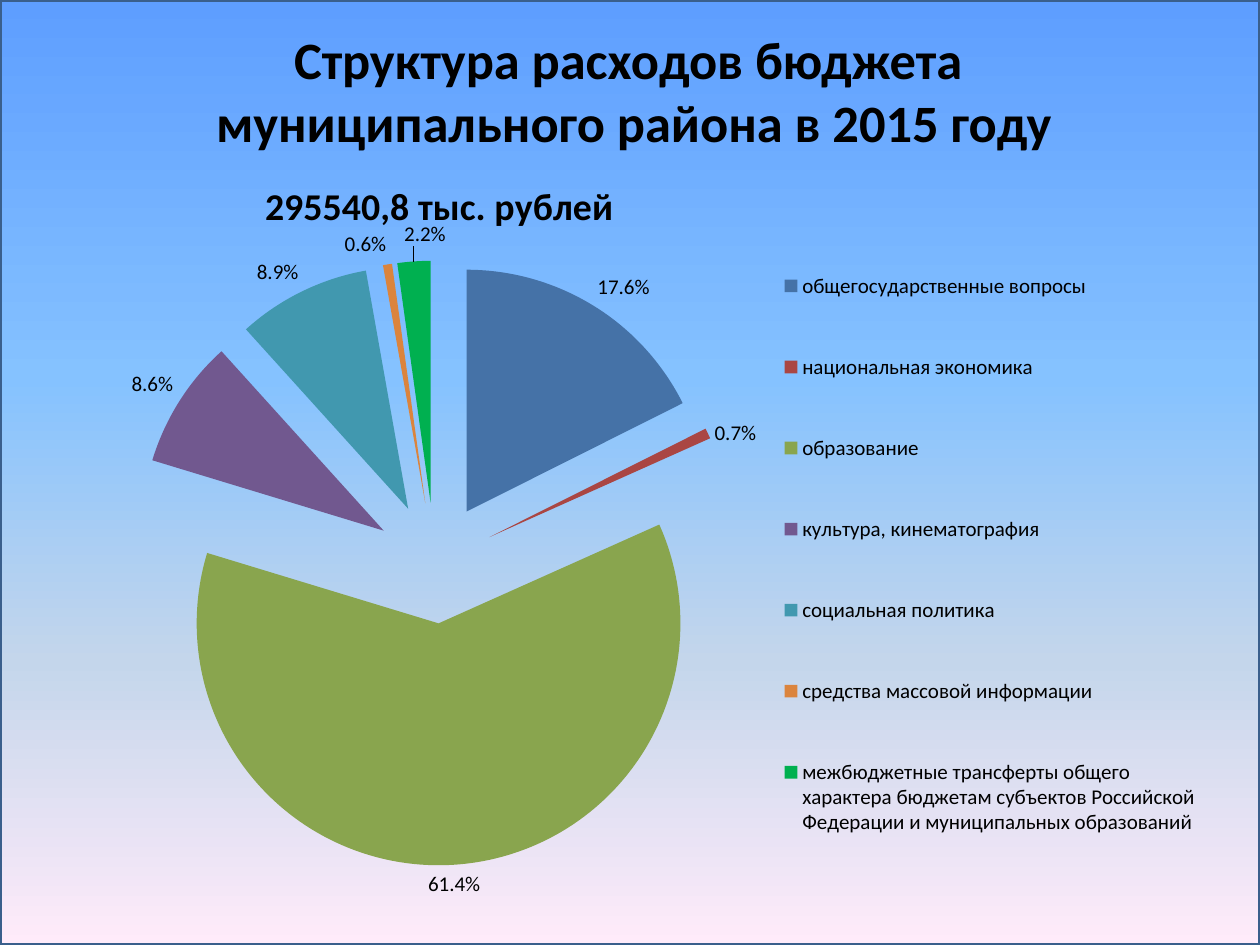
from lxml import etree
from pptx import Presentation
from pptx.chart.data import CategoryChartData
from pptx.dml.color import RGBColor
from pptx.enum.chart import XL_CHART_TYPE, XL_LABEL_POSITION, XL_LEGEND_POSITION
from pptx.enum.shapes import MSO_SHAPE
from pptx.enum.text import MSO_ANCHOR, PP_ALIGN
from pptx.oxml import parse_xml
from pptx.oxml.ns import qn
from pptx.util import Inches, Pt

PIE = XL_CHART_TYPE.PIE
OUTSIDE_END = XL_LABEL_POSITION.OUTSIDE_END
LEGEND_RIGHT = XL_LEGEND_POSITION.RIGHT
RECTANGLE = MSO_SHAPE.RECTANGLE
MIDDLE = MSO_ANCHOR.MIDDLE
CENTER = PP_ALIGN.CENTER

FONT = "Calibri"
COLORS = {
    "text": "000000",
    "border": "3A5F8C",
    "general": "4572A7",
    "economy": "AA4643",
    "education": "89A54E",
    "culture": "71588F",
    "social": "4198AF",
    "media": "DB843D",
    "transfers": "00B050",
}
BACKGROUND_STOPS = [(0, "5E9EFF"), (40, "85C2FF"), (70, "C4D6EB"), (100, "FFEBFA")]
EXPENSES = [
    ("общегосударственные вопросы", 0.176, "general"),
    ("национальная экономика", 0.007, "economy"),
    ("образование", 0.614, "education"),
    ("культура, кинематография", 0.086, "culture"),
    ("социальная политика", 0.089, "social"),
    ("средства массовой информации", 0.006, "media"),
    ("межбюджетные трансферты общего характера бюджетам субъектов "
     "Российской Федерации и муниципальных образований", 0.022, "transfers"),
]
TOTAL = "295540,8 тыс. рублей"
# Offsets of labels moved off their default place, as shares of the chart size
LABEL_OFFSETS = {1: (0, 0.02), 6: (0.01, -0.01)}


def style_font(font, size, bold=False):
    font.name = FONT
    font.size = Pt(size)
    font.bold = bold
    font.color.rgb = RGBColor.from_string(COLORS["text"])


def place_chart_part(anchor, **settings):
    """Put a manual layout right after the anchor element, replacing an empty one."""
    for old in anchor.getparent().findall(qn("c:layout")):
        anchor.getparent().remove(old)
    layout = etree.Element(qn("c:layout"))
    manual = etree.SubElement(layout, qn("c:manualLayout"))
    for name, value in settings.items():
        etree.SubElement(manual, qn(f"c:{name}")).set("val", str(value))
    anchor.addnext(layout)


presentation = Presentation()
presentation.slide_width = Inches(10)
presentation.slide_height = Inches(7.5)
slide = presentation.slides.add_slide(presentation.slide_layouts[5])

# Background, placed behind the title
background = slide.shapes.add_shape(RECTANGLE, 0, 0, Inches(10), Inches(7.5))
background.shadow.inherit = False
background.line.color.rgb = RGBColor.from_string(COLORS["border"])
background.line.width = Pt(2)
background.fill.gradient()
background.fill.gradient_angle = 270
stop_list = background.fill._xPr.find(".//" + qn("a:gsLst"))
for stop in list(stop_list):
    stop_list.remove(stop)
for percent, color in BACKGROUND_STOPS:
    stop = etree.SubElement(stop_list, qn("a:gs"), pos=str(percent * 1000))
    etree.SubElement(stop, qn("a:srgbClr"), val=color)
slide.shapes.title._element.addprevious(background._element)

# Title
title = slide.shapes.title
title.left, title.top = Inches(0.31), Inches(0.16)
title.width, title.height = Inches(9.45), Inches(1.11)
title.text_frame.word_wrap = True
title.text_frame.vertical_anchor = MIDDLE
paragraph = title.text_frame.paragraphs[0]
paragraph.alignment = CENTER
for index, line in enumerate(["Структура расходов бюджета ", "муниципального района в 2015 году"]):
    if index:
        paragraph.add_line_break()
    run = paragraph.add_run()
    run.text = line
    style_font(run.font, 30, bold=True)

# Expense chart
chart_data = CategoryChartData(number_format="0.0%")
chart_data.categories = [name for name, _, _ in EXPENSES]
chart_data.add_series(TOTAL, [value for _, value, _ in EXPENSES])
chart = slide.shapes.add_chart(
    PIE, Inches(0.39), Inches(1.25), Inches(9.22), Inches(5.94), chart_data
).chart
style_font(chart.font, 18)

chart.has_title = True
run = chart.chart_title.text_frame.paragraphs[0].add_run()
run.text = TOTAL
style_font(run.font, 21.6, bold=True)
place_chart_part(chart.chart_title._element.find(qn("c:tx")),
                 xMode="edge", yMode="edge", x=0.18, y=0.02)

chart.has_legend = True
legend = chart.legend
legend.position = LEGEND_RIGHT
legend.include_in_layout = False
style_font(legend.font, 12)
place_chart_part(legend._element.find(qn("c:legendPos")),
                 xMode="edge", yMode="edge", x=0.63, y=0.08, w=0.36, h=0.9)

plot = chart.plots[0]
plot.vary_by_categories = True
plot_area = plot._element.getparent()
for old in plot_area.findall(qn("c:layout")):
    plot_area.remove(old)
plot_area.insert(0, parse_xml(
    '<c:layout xmlns:c="http://schemas.openxmlformats.org/drawingml/2006/chart">'
    '<c:manualLayout><c:layoutTarget val="inner"/><c:xMode val="edge"/><c:yMode val="edge"/>'
    '<c:x val="0.034"/><c:y val="0.138"/><c:w val="0.596"/><c:h val="0.808"/>'
    '</c:manualLayout></c:layout>'))

series = plot.series[0]
explosion = etree.Element(qn("c:explosion"), val="25")
series._element.find(qn("c:tx")).addnext(explosion)
for index, (_, _, color) in enumerate(EXPENSES):
    fill = series.points[index].format.fill
    fill.solid()
    fill.fore_color.rgb = RGBColor.from_string(COLORS[color])

labels = series.data_labels
labels.show_value = True
labels.show_percentage = False
labels.number_format = "0.0%"
labels.number_format_is_linked = False
labels.position = OUTSIDE_END
style_font(labels.font, 12)

for index in LABEL_OFFSETS:
    label = series.points[index].data_label
    style_font(label.font, 12)
    label.position = OUTSIDE_END
for label_element in labels._element.findall(qn("c:dLbl")):
    label_index = label_element.find(qn("c:idx"))
    offset_x, offset_y = LABEL_OFFSETS[int(label_index.get("val"))]
    place_chart_part(label_index, x=offset_x, y=offset_y)

presentation.save("out.pptx")
